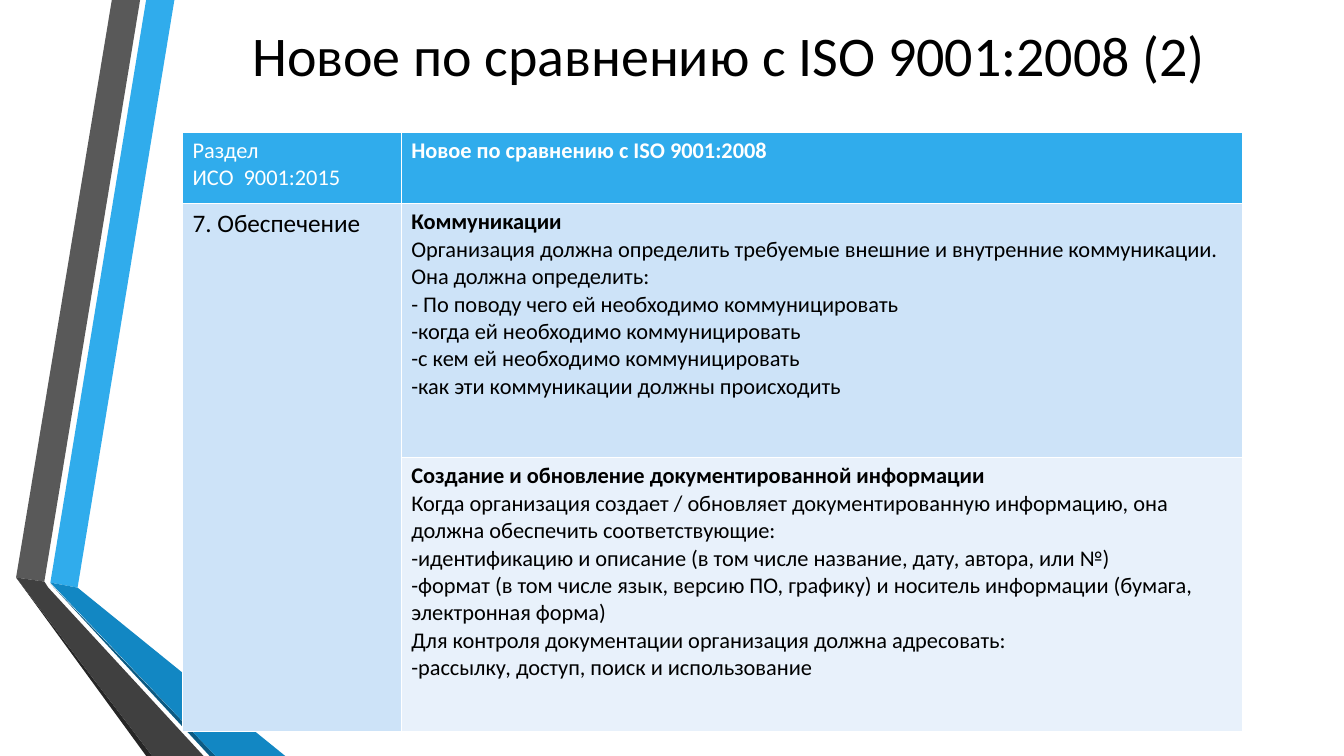
from pptx import Presentation
from pptx import util as u
from pptx.dml.color import RGBColor
from pptx.enum import text

WHITE = RGBColor(0xFF, 0xFF, 0xFF)
BLACK = RGBColor(0, 0, 0)
SKY = RGBColor(0x30, 0xAC, 0xEC)
BLUE = RGBColor(0x12, 0x87, 0xC3)
NAVY = RGBColor(0x0C, 0x5A, 0x82)
GRAY = RGBColor(0x59, 0x59, 0x59)
DARK = RGBColor(0x40, 0x40, 0x40)
COAL = RGBColor(0x26, 0x26, 0x26)
PALE = RGBColor(0xCD, 0xE3, 0xF8)
LIGHT = RGBColor(0xE8, 0xF1, 0xFB)

FONT = "Calibri"
TITLE = "Новое по сравнению с ISO 9001:2008 (2) "
BANDS = [
    (SKY, [(0.34, 5.78), (0.61, 5.83), (1.57, 0), (1.29, 0)]),
    (GRAY, [(1.23, 0), (0.95, 0), (0, 5.73), (0.28, 5.77)]),
    (COAL, [(0, 5.73), (1.29, 7.5), (1.35, 7.5)]),
    (NAVY, [(0.34, 5.79), (1.92, 7.5), (1.98, 7.5)]),
    (BLUE, [(0.34, 5.78), (1.98, 7.5), (2.67, 7.5), (0.61, 5.83)]),
    (DARK, [(1.86, 7.5), (0.32, 5.83), (0.28, 5.77), (0, 5.73), (1.35, 7.5)]),
]
COLS = [2.17, 8.34]
ROWS = [0.71, 2.52, 2.72]
HEAD = ["Раздел", "ИСО  9001:2015"]
NEWS = ["Новое по сравнению с ISO 9001:2008"]
PART = ["7. Обеспечение"]
TALK = [
    "Коммуникации",
    "Организация должна определить требуемые внешние и внутренние коммуникации.",
    "Она должна определить:",
    "- По поводу чего ей необходимо коммуницировать",
    "-когда ей необходимо коммуницировать",
    "-с кем ей необходимо коммуницировать",
    "-как эти коммуникации должны происходить",
]
DOCS = [
    "Создание и обновление документированной информации",
    "Когда организация создает / обновляет документированную информацию, "
    "она должна обеспечить соответствующие:",
    "-идентификацию и описание (в том числе название, дату, автора, или №)",
    "-формат (в том числе язык, версию ПО, графику) и носитель информации "
    "(бумага, электронная форма)",
    "Для контроля документации организация должна адресовать:",
    "-рассылку, доступ, поиск и использование",
]


def style(para, size, color, bold=False):
    for run in para.runs:
        run.font.name = FONT
        run.font.size = u.Pt(size)
        run.font.bold = bold
        run.font.color.rgb = color


def add_bands(slide, left, top):
    for color, points in BANDS:
        spots = [(u.Inches(left + x), u.Inches(top + y)) for x, y in points]
        pen = slide.shapes.build_freeform(*spots[0])
        pen.add_line_segments(spots[1:], close=True)
        band = pen.convert_to_shape()
        band.shadow.inherit = False
        band.fill.solid()
        band.fill.fore_color.rgb = color
        band.line.fill.background()


def add_title(slide, left, top, width, height):
    title = slide.shapes.title
    title.left, title.top = u.Inches(left), u.Inches(top)
    title.width, title.height = u.Inches(width), u.Inches(height)
    frame = title.text_frame
    frame.text = TITLE
    frame.word_wrap = True
    frame.auto_size = text.MSO_AUTO_SIZE.NONE
    frame.vertical_anchor = text.MSO_ANCHOR.MIDDLE
    para = frame.paragraphs[0]
    para.alignment = text.PP_ALIGN.CENTER
    style(para, 40, BLACK)


def fill_cell(cell, lines, fill, color, size=16, lead=False):
    cell.fill.solid()
    cell.fill.fore_color.rgb = fill
    cell.text_frame.text = "\n".join(lines)
    for i, para in enumerate(cell.text_frame.paragraphs):
        style(para, size, color, lead and i == 0)


def add_grid(slide, left, top):
    frame = slide.shapes.add_table(
        len(ROWS), len(COLS), u.Inches(left), u.Inches(top),
        u.Inches(sum(COLS)), u.Inches(sum(ROWS)))
    grid = frame.table
    for col, width in zip(grid.columns, COLS):
        col.width = u.Inches(width)
    for row, height in zip(grid.rows, ROWS):
        row.height = u.Inches(height)
    grid.cell(1, 0).merge(grid.cell(2, 0))
    fill_cell(grid.cell(0, 0), HEAD, SKY, WHITE)
    fill_cell(grid.cell(0, 1), NEWS, SKY, WHITE, lead=True)
    fill_cell(grid.cell(1, 0), PART, PALE, BLACK, size=18)
    fill_cell(grid.cell(1, 1), TALK, PALE, BLACK, lead=True)
    fill_cell(grid.cell(2, 1), DOCS, LIGHT, BLACK, lead=True)


def main():
    deck = Presentation()
    deck.slide_width, deck.slide_height = u.Inches(13.33), u.Inches(7.5)
    slide = deck.slides.add_slide(deck.slide_layouts[5])
    add_bands(slide, 0.16, 0)
    add_title(slide, 1.81, 0, 10.96, 1.08)
    add_grid(slide, 1.81, 1.31)
    deck.save("out.pptx")


if __name__ == "__main__":
    main()
